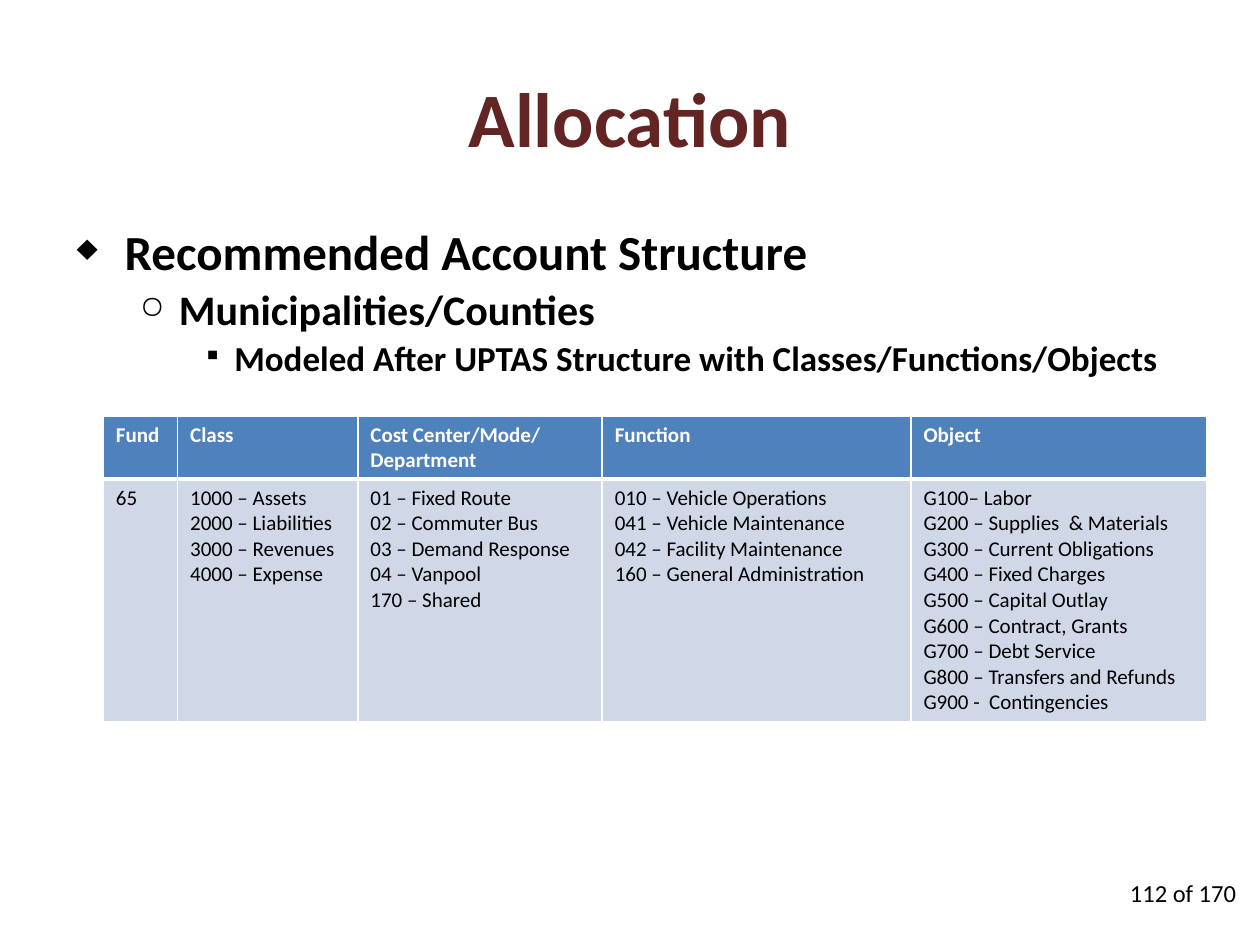
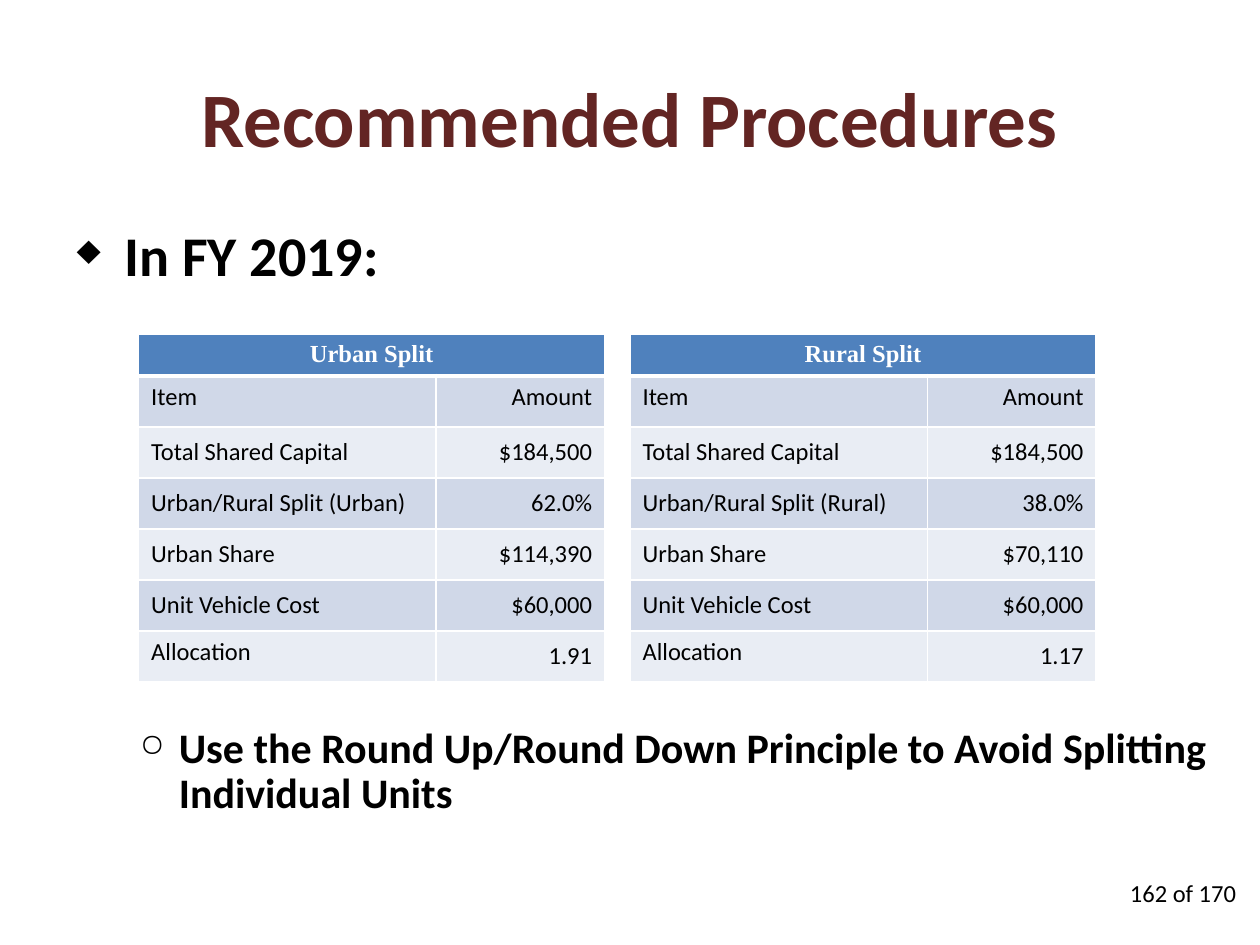
"""Build two slides on account structure and the urban/rural capital split."""
from lxml import etree
from pptx import Presentation, util as u
from pptx.dml.color import RGBColor
from pptx.enum import text
from pptx.oxml import ns

THEME = {
    "title": dict(name="Calibri", size=u.Pt(44), bold=True, color="632523"),
    "body": dict(name="Calibri", bold=True, color="000000"),
    "page": dict(name="Calibri", size=u.Pt(14), bold=False, color="000000"),
    "head": dict(name="Calibri", size=u.Pt(12), bold=True, color="FFFFFF"),
    "cell": dict(name="Calibri", size=u.Pt(12), bold=False, color="000000"),
    "split_head": dict(name="Times New Roman", size=u.Pt(14), bold=True, color="FFFFFF"),
    "split_cell": dict(name="Calibri", size=u.Pt(14), bold=False, color="000000"),
    "header_fill": "4F81BD", "bands": ("D0D8E8", "E9EDF4"), "rule": "FFFFFF",
}
BULLETS = [("♦", 0.38, 0.38), ("○", 0.81, 0.31), ("▪", 1.25, 0.25)]
LEFT, CENTER, RIGHT = text.PP_ALIGN.LEFT, text.PP_ALIGN.CENTER, text.PP_ALIGN.RIGHT
TOP, MIDDLE = text.MSO_ANCHOR.TOP, text.MSO_ANCHOR.MIDDLE


def write(tf, lines, style, align=LEFT):
    """Fill a text frame, one paragraph a line."""
    for i, line in enumerate(lines):
        p = tf.paragraphs[0] if i == 0 else tf.add_paragraph()
        p.alignment = align
        r = p.add_run()
        r.text = line
        for key, value in style.items():
            if key == "color":
                r.font.color.rgb = RGBColor.from_string(value)
            else:
                setattr(r.font, key, value)


def paint(cell, fill, bottom=1):
    """Give a cell white rules and a fill."""
    tcPr = cell._tc.get_or_add_tcPr()
    for side, width in zip("LRTB", (1, 1, 1, bottom)):
        ln = etree.SubElement(tcPr, ns.qn(f"a:ln{side}"), w=str(u.Pt(width)))
        solid = etree.SubElement(ln, ns.qn("a:solidFill"))
        etree.SubElement(solid, ns.qn("a:srgbClr"), val=THEME["rule"])
    cell.fill.solid()
    cell.fill.fore_color.rgb = RGBColor.from_string(fill)


prs = Presentation()
prs.slide_width, prs.slide_height = u.Inches(10), u.Inches(7.5)

pages = [
    ("Allocation", "112 of 170", [
        (1.75, [(0, 28, "Recommended Account Structure"),
                (1, 24, "Municipalities/Counties"),
                (2, 20, "Modeled After UPTAS Structure with Classes/Functions/Objects")])]),
    ("Recommended Procedures", "162 of 170", [
        (1.75, [(0, 32, "In FY 2019:")]),
        (5.71, [(1, 24, "Use the Round Up/Round Down Principle to Avoid "
                        "Splitting Individual Units")])]),
]

for title, page, blocks in pages:
    s = prs.slides.add_slide(prs.slide_layouts[5])
    sp = s.shapes.title
    sp.left, sp.top, sp.width, sp.height = map(u.Inches, (0, 0.3, 10, 1.25))
    tf = sp.text_frame
    tf.auto_size, tf.vertical_anchor = text.MSO_AUTO_SIZE.NONE, MIDDLE
    write(tf, [title], THEME["title"], CENTER)

    for top, items in blocks:
        tf = s.shapes.add_textbox(*map(u.Inches, (0.5, top, 9.27, 1.2))).text_frame
        tf.word_wrap = True
        tf.margin_left = tf.margin_right = u.Inches(0.11)
        tf.margin_top = tf.margin_bottom = u.Inches(0.06)
        write(tf, [line for _, _, line in items], THEME["body"])
        for i, (p, (level, size, _)) in enumerate(zip(tf.paragraphs, items)):
            char, margin, hang = BULLETS[level]
            pPr = p._p.get_or_add_pPr()
            pPr.set("marL", str(u.Inches(margin)))
            pPr.set("indent", str(-u.Inches(hang)))
            etree.SubElement(pPr, ns.qn("a:buSzPct"), val="75000")
            etree.SubElement(pPr, ns.qn("a:buChar"), char=char)
            p.level = level
            p.line_spacing = 0.9
            if i:
                p.space_before = u.Pt(size * 0.2)
            p.runs[0].font.size = u.Pt(size)

    tf = s.shapes.add_textbox(*map(u.Inches, (8.73, 6.92, 1.18, 0.4))).text_frame
    tf.word_wrap = True
    write(tf, [page], THEME["page"], RIGHT)

accounts = [
    (0.59, ["Fund"], ["65"]),
    (1.43, ["Class"],
     ["1000 – Assets", "2000 – Liabilities", "3000 – Revenues", "4000 – Expense"]),
    (1.94, ["Cost Center/Mode/", "Department"],
     ["01 – Fixed Route", "02 – Commuter Bus", "03 – Demand Response",
      "04 – Vanpool", "170 – Shared"]),
    (2.45, ["Function"],
     ["010 – Vehicle Operations", "041 – Vehicle Maintenance",
      "042 – Facility Maintenance", "160 – General Administration"]),
    (2.35, ["Object"],
     ["G100– Labor", "G200 – Supplies  & Materials", "G300 – Current Obligations",
      "G400 – Fixed Charges", "G500 – Capital Outlay", "G600 – Contract, Grants",
      "G700 – Debt Service", "G800 – Transfers and Refunds", "G900 -  Contingencies"]),
]
tbl = prs.slides[0].shapes.add_table(
    2, len(accounts), *map(u.Inches, (0.82, 3.3, 8.76, 2.43))).table
tbl.rows[0].height, tbl.rows[1].height = u.Inches(0.5), u.Inches(1.93)
for c, (width, heading, codes) in enumerate(accounts):
    tbl.columns[c].width = u.Inches(width)
    write(tbl.cell(0, c).text_frame, heading, THEME["head"])
    write(tbl.cell(1, c).text_frame, codes, THEME["cell"])
    paint(tbl.cell(0, c), THEME["header_fill"], 3)
    paint(tbl.cell(1, c), THEME["bands"][0])

splits = [
    (1.1, "Urban", ["$184,500", "62.0%", "$114,390", "$60,000", "1.91"]),
    (5, "Rural", ["$184,500", "38.0%", "$70,110", "$60,000", "1.17"]),
]
for left, area, amounts in splits:
    labels = ["Item", "Total Shared Capital", f"Urban/Rural Split ({area})",
              "Urban Share", "Unit Vehicle Cost", "Allocation"]
    tbl = prs.slides[1].shapes.add_table(
        len(labels) + 1, 2, *map(u.Inches, (left, 2.65, 3.7, 2.76))).table
    tbl.columns[0].width, tbl.columns[1].width = u.Inches(2.36), u.Inches(1.34)
    tbl.rows[0].height = u.Inches(0.33)
    for c in range(2):
        paint(tbl.cell(0, c), THEME["header_fill"], 3)
    tbl.cell(0, 0).merge(tbl.cell(0, 1))
    write(tbl.cell(0, 0).text_frame, [f"{area} Split"], THEME["split_head"], CENTER)
    for i, row in enumerate(zip(labels, ["Amount"] + amounts)):
        tbl.rows[i + 1].height = u.Inches(2.43 / len(labels))
        for c, (value, align) in enumerate(zip(row, (LEFT, RIGHT))):
            cell = tbl.cell(i + 1, c)
            write(cell.text_frame, [value], THEME["split_cell"], align)
            paint(cell, THEME["bands"][i % 2])
            cell.vertical_anchor = TOP if value in ("Item", "Amount", "Allocation") else MIDDLE

prs.save("out.pptx")
